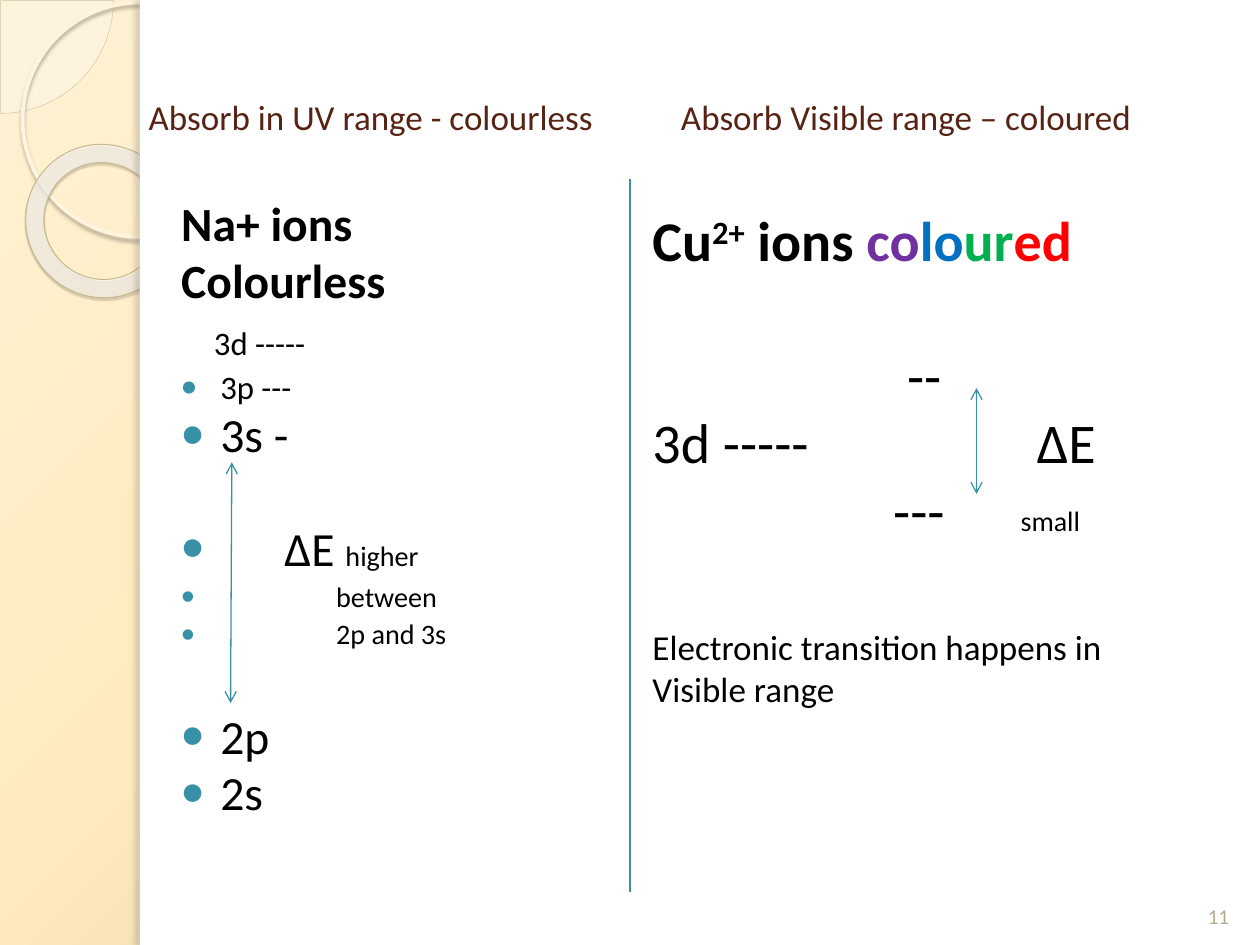
"""Build a slide comparing colourless sodium ions with coloured copper ions."""
from dataclasses import dataclass

from lxml import etree
from pptx import Presentation
from pptx.dml.color import RGBColor
from pptx.enum.shapes import MSO_CONNECTOR, MSO_SHAPE
from pptx.enum.text import MSO_ANCHOR, PP_ALIGN
from pptx.oxml.ns import qn
from pptx.util import Inches, Pt

STRAIGHT = MSO_CONNECTOR.STRAIGHT
PIE, OVAL, DONUT, RECT = MSO_SHAPE.PIE, MSO_SHAPE.OVAL, MSO_SHAPE.DONUT, MSO_SHAPE.RECTANGLE
TOP, MIDDLE, BOTTOM = MSO_ANCHOR.TOP, MSO_ANCHOR.MIDDLE, MSO_ANCHOR.BOTTOM
LEFT, CENTER = PP_ALIGN.LEFT, PP_ALIGN.CENTER


@dataclass(frozen=True)
class Theme:
    font: str = "Calibri"
    ink: str = "000000"
    title: str = "572314"
    accent: str = "3891A7"
    number: str = "B6A98A"
    white: str = "FFFFFF"
    violet: str = "7030A0"
    blue: str = "0070C0"
    green: str = "00B050"
    red: str = "FF0000"
    heading: float = 32
    title_size: float = 20
    level: float = 27.2
    sublevel: float = 18.7
    note: float = 16.1
    small: float = 16
    page: float = 12


T = Theme()


@dataclass(frozen=True)
class Run:
    text: str
    size: float
    color: str = T.ink
    bold: bool = False
    raised: bool = False
    tracking: float = 0


@dataclass(frozen=True)
class Para:
    runs: tuple[Run, ...]
    before: float = 0
    spacing: float = 1
    margin: float = 0
    indent: float = 0
    bullet: bool = False
    align: PP_ALIGN = LEFT


@dataclass(frozen=True)
class Decor:
    shape: MSO_SHAPE
    box: tuple[float, ...]
    fill: tuple[str, int] | None = None
    stops: tuple[tuple[int, str, int], ...] = ()
    line: tuple[str, float] | None = None
    shadow: tuple[str, int, float, float, int] | None = None
    rotation: float = 0
    adjust: tuple[int, float] | None = None


@dataclass(frozen=True)
class Line:
    start: tuple[float, float]
    end: tuple[float, float]
    arrows: bool = True


def child(parent, tag: str, **attrs):
    return etree.SubElement(parent, qn(tag), {k: str(v) for k, v in attrs.items()})


def add_color(parent, color: str, alpha: int = 100) -> None:
    child(child(parent, "a:srgbClr", val=color), "a:alpha", val=alpha * 1000)


def radial(fill, element, stops, rect: tuple[int, ...]) -> None:
    fill.gradient()
    grad = element.find(".//" + qn("a:gradFill"))
    for old in list(grad):
        grad.remove(old)
    stop_list = child(grad, "a:gsLst")
    for pos, color, alpha in stops:
        add_color(child(stop_list, "a:gs", pos=pos * 1000), color, alpha)
    edges = {k: v * 1000 for k, v in zip("ltrb", rect)}
    child(child(grad, "a:path", path="circle"), "a:fillToRect", **edges)


def add_decor(s, d: Decor) -> None:
    sp = s.shapes.add_shape(d.shape, *map(Inches, d.box))
    sp.rotation = d.rotation
    sp.shadow.inherit = False
    if d.adjust:
        sp.adjustments[d.adjust[0]] = d.adjust[1]
    if d.stops:
        radial(sp.fill, sp._element, d.stops, (-408, -50, 508, 150))
    elif d.fill:
        sp.fill.solid()
        sp.fill.fore_color.rgb = RGBColor.from_string(d.fill[0])
        clr = sp._element.spPr.find(qn("a:solidFill"))[0]
        child(clr, "a:alpha", val=d.fill[1] * 1000)
    else:
        sp.fill.background()
    if d.line:
        sp.line.color.rgb = RGBColor.from_string(d.line[0])
        sp.line.width = Pt(d.line[1])
    else:
        sp.line.fill.background()
    if d.shadow:
        color, alpha, blur, dist, angle = d.shadow
        effects = sp._element.spPr.find(qn("a:effectLst"))
        shadow = child(effects, "a:outerShdw", blurRad=Pt(blur), dist=Pt(dist),
                       dir=angle * 60000, algn="tl", rotWithShape=0)
        add_color(shadow, color, alpha)


def add_line(s, line: Line) -> None:
    cx = s.shapes.add_connector(STRAIGHT, *map(Inches, line.start + line.end))
    cx.line.color.rgb = RGBColor.from_string(T.accent)
    cx.line.width = Pt(0.75)
    if line.arrows:
        for tag in ("a:headEnd", "a:tailEnd"):
            child(cx.line._get_or_add_ln(), tag, type="arrow")
    child(cx._element.spPr, "a:effectLst")


def write_para(p, para: Para) -> None:
    p.alignment = para.align
    p.space_before, p.line_spacing = Pt(para.before), para.spacing
    p_pr = p._p.get_or_add_pPr()
    p_pr.set("marL", str(Inches(para.margin)))
    p_pr.set("indent", str(Inches(para.indent)))
    if para.bullet:
        child(child(p_pr, "a:buClr"), "a:srgbClr", val=T.accent)
        child(p_pr, "a:buSzPct", val=80000)
        child(p_pr, "a:buFont", typeface=T.font)
        child(p_pr, "a:buChar", char="●")
    for run in para.runs:
        r = p.add_run()
        r.text = run.text
        r.font.name, r.font.size, r.font.bold = T.font, Pt(run.size), run.bold
        r.font.color.rgb = RGBColor.from_string(run.color)
        if run.raised:
            r.font._element.set("baseline", "30000")
        if run.tracking:
            r.font._element.set("spc", str(round(run.tracking * 100)))


def write_text(sp, box: tuple[float, ...], paras: list[Para], anchor: MSO_ANCHOR = TOP) -> None:
    sp.left, sp.top, sp.width, sp.height = map(Inches, box)
    tf = sp.text_frame
    tf.word_wrap, tf.vertical_anchor = True, anchor
    for i, para in enumerate(paras):
        write_para(tf.add_paragraph() if i else tf.paragraphs[0], para)


def add_text(s, box: tuple[float, ...], paras: list[Para], anchor: MSO_ANCHOR = TOP) -> None:
    write_text(s.shapes.add_textbox(0, 0, 0, 0), box, paras, anchor)


def level(*runs: Run, margin: float = 0.4, bullet: bool = True, before: float = 6) -> Para:
    return Para(runs, before, 0.8, margin, 0.09 - margin if bullet else 0, bullet)


DECOR = [
    Decor(PIE, (-0.89, -0.89, 1.79, 1.79), ("FEFAF4", 33), line=("D3C39F", 0.25), adjust=(1, 54)),
    Decor(OVAL, (0.18, 0.02, 1.86, 1.86), line=("FFF5DE", 2.15), shadow=("B0A68F", 85, 2, 2, 90)),
    Decor(DONUT, (0.2, 1.15, 1.23, 1.21), line=("C7B893", 0.58), rotation=38.6, adjust=(0, 0.12),
          stops=((0, "FFFCF6", 70), (70, "FFFEFB", 55), (100, "F0D28E", 60)),
          shadow=("5A5444", 35, 1, 1.2, 75)),
    Decor(RECT, (1.11, 0, 8.89, 7.5), (T.white, 100)),
    Decor(RECT, (1.11, 0, 0.08, 7.5), (T.white, 100), shadow=("736F63", 25, 3, 3, 180)),
]
TITLE = Para((Run("Absorb in UV range - colourless", T.title_size, T.title),
              Run(" ", T.title_size, T.title, tracking=45.8),
              Run("Absorb Visible range – coloured", T.title_size, T.title)))
SODIUM = [
    level(Run("Na+ ions", T.level, bold=True), margin=0.09, bullet=False),
    level(Run("Colourless", T.level, bold=True), margin=0.09, bullet=False),
    level(Run("3d -----", T.sublevel), margin=0.35, bullet=False, before=13.4),
    level(Run("3p ---", T.sublevel), before=7),
    level(Run("3s -", T.level)),
    level(Run("ΔE ", T.level), Run("higher", T.note), margin=0.91, before=38.5),
    level(Run("between", T.note), margin=1.32),
    level(Run("2p and 3s", T.note), margin=1.32),
    level(Run("2p", T.level), before=38.5),
    level(Run("2s", T.level)),
]
COPPER = [
    Para((Run("Cu", T.heading, bold=True), Run("2+", T.heading, bold=True, raised=True),
          Run(" ions ", T.heading, bold=True))
         + tuple(Run(text, T.heading, color, True) for text, color in
                 zip(("co", "lo", "ur", "ed"), (T.violet, T.blue, T.green, T.red)))),
    Para((Run("--", T.heading),), before=39, margin=2.02),
    Para((Run("3d -----", T.heading), Run(" ", T.heading, tracking=123), Run("ΔE", T.heading))),
    Para((Run("---", T.heading), Run(" ", T.heading, tracking=36.2), Run("small", T.small)),
         margin=1.91),
    Para((Run("Electronic transition happens in Visible range", T.title_size),), before=47.5),
]
LINES = [
    Line((1.84, 3.67), (1.83, 5.58)),
    Line((7.75, 3.08), (7.75, 3.92)),
    Line((5, 1.42), (5, 7.08), arrows=False),
]


def main() -> None:
    prs = Presentation()
    prs.slide_width, prs.slide_height = Inches(10), Inches(7.5)
    s = prs.slides.add_slide(prs.slide_layouts[5])
    radial(s.background.fill, s.element,
           ((0, "FFF1D3", 100), (40, "FFEBBE", 100), (100, "C9B484", 100)), (-24, -20, 124, 120))
    for decor in DECOR:
        add_decor(s, decor)
    title = s.shapes.title
    s.shapes._spTree.append(title._element)
    write_text(title, (1.08, 0.3, 8.69, 1.25), [TITLE], MIDDLE)
    add_text(s, (1.25, 1.58, 3.5, 5.25), SODIUM)
    add_text(s, (9.42, 6.9, 0.5, 0.52), [Para((Run("11", T.page, T.number),), align=CENTER)], BOTTOM)
    add_text(s, (5.08, 1.58, 4.25, 4.75), COPPER)
    for line in LINES:
        add_line(s, line)
    prs.save("out.pptx")


if __name__ == "__main__":
    main()
